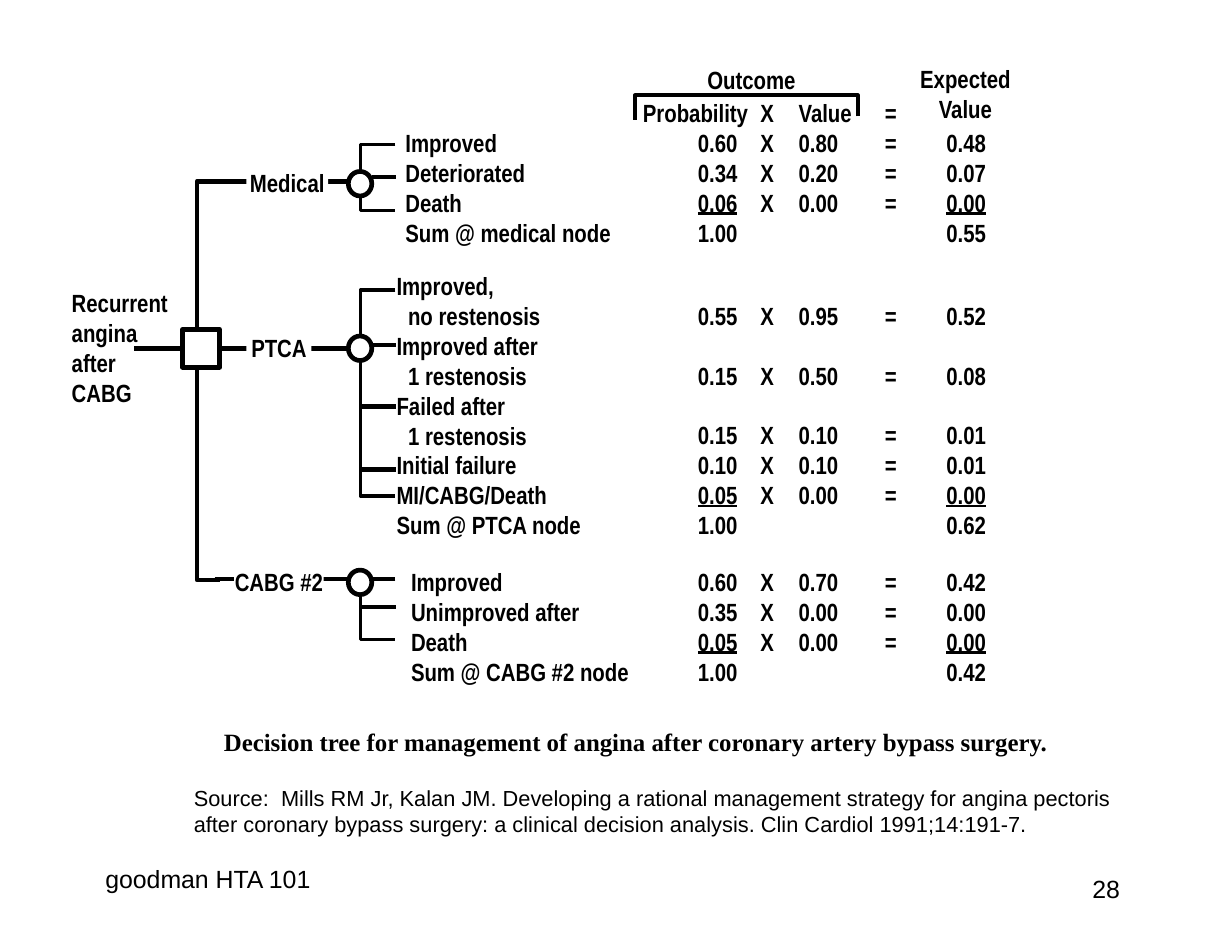
import pptx
import pptx.util
import pptx.dml.color
import pptx.enum.shapes
import pptx.enum.text
from lxml import etree

Pt = pptx.util.Pt
ALIGN = pptx.enum.text.PP_ALIGN
SHAPE = pptx.enum.shapes.MSO_SHAPE
COLORS = {"ink": "000000", "paper": "FFFFFF"}
A = "{http://schemas.openxmlformats.org/drawingml/2006/main}"
LINE_HEIGHT = 19.15
INSETS = (7.92, 4.32, 7.92, 4.32)
TAB_STOPS = (35.3, 75.6, 100.1, 155.5, 195.1)
NARROW = {"name": "Arial Narrow", "size": Pt(16), "bold": True}
PLAIN = {"name": "Arial", "size": Pt(16), "bold": False}

# Heights are measured from the middle of each branch's chance node.
BRANCHES = [
    {"name": "Medical", "name_left": 158.4, "name_width": 52.6,
     "middle": 118.1, "stem": -1.5, "spine": (-25.2, 17.3),
     "prongs": [(239, -4.3)], "text_left": 252.7, "text_top": -40.3,
     "outcomes": [("Improved", "0.60", "0.80", "0.48"),
                  ("Deteriorated", "0.34", "0.20", "0.07"),
                  ("Death", "0.06", "0.00", "0.00")],
     "sum": ("Sum @ medical node", "1.00", "0.55")},
    {"name": "PTCA", "name_left": 158.4, "name_width": 41.8,
     "middle": 223.9, "stem": 0, "spine": (-37.4, 95.1),
     "prongs": [(239, -2.1), (232, 37.5), (232, 77.8)],
     "text_left": 247, "text_top": -54,
     "outcomes": [("Improved,\nno restenosis", "0.55", "0.95", "0.52"),
                  ("Improved after\n1 restenosis", "0.15", "0.50", "0.08"),
                  ("Failed after\n1 restenosis", "0.15", "0.10", "0.01"),
                  ("Initial failure", "0.10", "0.10", "0.01"),
                  ("MI/CABG/Death", "0.05", "0.00", "0.00")],
     "sum": ("Sum @ PTCA node", "1.00", "0.62")},
    {"name": "CABG #2", "name_left": 150.5, "name_width": 57.6,
     "middle": 374.4, "stem": -2.2, "spine": (-2.2, 36.7),
     "prongs": [(231.8, 15.8)], "text_left": 256.3, "text_top": -14.4,
     "outcomes": [("Improved", "0.60", "0.70", "0.42"),
                  ("Unimproved after", "0.35", "0.00", "0.00"),
                  ("Death", "0.05", "0.00", "0.00")],
     "sum": ("Sum @ CABG #2 node", "1.00", "0.42")},
]


def color(key):
    return pptx.dml.color.RGBColor.from_string(COLORS[key])


def style_font(font, style):
    for attribute, value in style.items():
        setattr(font, attribute, value)
    font.color.rgb = color("ink")


def style_frame(frame, insets):
    margins = ("margin_left", "margin_top", "margin_right", "margin_bottom")
    for margin, inset in zip(margins, insets):
        setattr(frame, margin, Pt(inset))
    frame.word_wrap = True


def add_text(slide, box, lines, style=NARROW, align=ALIGN.LEFT, insets=INSETS, filled=False):
    """Place one paragraph per line; a line may be a list of (text, underlined) runs."""
    holder = slide.shapes.add_textbox(*map(Pt, box))
    if filled:
        holder.fill.solid()
        holder.fill.fore_color.rgb = color("paper")
    frame = holder.text_frame
    style_frame(frame, insets)
    for index, line in enumerate(lines):
        paragraph = frame.add_paragraph() if index else frame.paragraphs[0]
        paragraph.alignment = align
        for text, underlined in [(line, False)] if isinstance(line, str) else line:
            run = paragraph.add_run()
            run.text = text
            style_font(run.font, {**style, "underline": underlined})
    return frame.paragraphs


def add_line(slide, start, end, weight=3):
    line = slide.shapes.add_connector(
        pptx.enum.shapes.MSO_CONNECTOR.STRAIGHT, *map(Pt, (*start, *end)))
    line.line.color.rgb = color("ink")
    line.line.width = Pt(weight)
    etree.SubElement(line._element.spPr, A + "effectLst")
    return line


def add_outline(slide, points, weight):
    corners = [(Pt(x), Pt(y)) for x, y in points]
    builder = slide.shapes.build_freeform(*corners[0])
    builder.add_line_segments(corners[1:], close=False)
    outline = builder.convert_to_shape()
    outline.shadow.inherit = False
    outline.fill.background()
    outline.line.color.rgb = color("ink")
    outline.line.width = Pt(weight)


def add_node(slide, kind, box):
    node = slide.shapes.add_shape(kind, *map(Pt, box))
    node.shadow.inherit = False
    node.fill.solid()
    node.fill.fore_color.rgb = color("paper")
    node.line.color.rgb = color("ink")
    node.line.width = Pt(3)
    return node


def set_tabs(paragraph):
    tabs = etree.SubElement(paragraph._p.get_or_add_pPr(), A + "tabLst")
    for stop in TAB_STOPS:
        etree.SubElement(tabs, A + "tab", pos=str(Pt(stop)), algn="l")


def add_root(slide, left, middle):
    """Draw the question, the decision square and the trunk; return the square."""
    add_outline(slide, [(left + 100.8, 116.6), (left + 88.5, 116.6),
                        (left + 88.5, 372.8), (left + 103, 372.8)], 3)
    decision = add_node(slide, SHAPE.RECTANGLE, (left + 79.2, middle - 12.2, 23.8, 24.4))
    lead = add_line(slide, (left + 48.2, middle), (left + 79.2, middle))
    lead.end_connect(decision, 1)
    add_text(slide, (left, middle - 43.2, 77.8, 85), ["Recurrent angina after CABG"])
    return decision


def add_branch(slide, branch, decision):
    middle = branch["middle"]
    stem_y = middle + branch["stem"]
    stem = add_line(slide, (138, stem_y), (226.8, stem_y))
    if not branch["stem"]:
        stem.begin_connect(decision, 3)
    add_text(slide, (branch["name_left"], middle - 10.3, branch["name_width"], 19.4),
             [branch["name"]], align=ALIGN.CENTER, insets=(0, 0, 0, 0), filled=True)
    top, bottom = (middle + offset for offset in branch["spine"])
    add_outline(slide, [(254.2, top), (231.8, top), (231.8, bottom), (254.2, bottom)], 2.25)
    for start, offset in branch["prongs"]:
        add_line(slide, (start, middle + offset), (254.9, middle + offset))
    add_node(slide, SHAPE.OVAL, (223.9, middle - 7.9, 15.1, 15.8))


def add_outcomes(slide, branch, table_left):
    """List a branch's outcomes and, in tabbed columns, their calculation."""
    top = branch["middle"] + branch["text_top"]
    labels, rows, gaps = [], [], []
    outcomes = branch["outcomes"]
    for outcome in outcomes:
        label, probability, value, expected = outcome
        labels += label.split("\n")
        gaps.append(LINE_HEIGHT * label.count("\n"))
        last = outcome is outcomes[-1]
        rows.append([("\t", False), (probability, last),
                     (f"\tX\t{value}\t=\t", False), (expected, last)])
    label, probability, expected = branch["sum"]
    labels.append(label)
    rows.append(f"\t{probability}\t\t\t\t{expected}")
    gaps.append(0)

    height = LINE_HEIGHT * len(labels) + 8.6
    continued = {label.split("\n")[1] for label, *_ in outcomes if "\n" in label}
    for paragraph in add_text(slide, (branch["text_left"], top, 167, height), labels):
        if paragraph.text in continued:
            paragraph._p.get_or_add_pPr().set("marL", str(Pt(7.4)))
    first_gap, gaps[0] = gaps[0], 0
    box = (table_left, top + first_gap, 290.9, height - first_gap)
    for paragraph, gap in zip(add_text(slide, box, rows), gaps):
        paragraph.space_before = Pt(gap)
        set_tabs(paragraph)


def add_heading(slide, left, top):
    centred = {"align": ALIGN.CENTER, "insets": (0, 0, 0, 0)}
    for paragraph in add_text(slide, (left, top + 17.3, 290.9, 27.8),
                              ["Probability\tX\tValue\t="]):
        set_tabs(paragraph)
    add_text(slide, (left + 181.4, top, 67.7, 38.2), ["Expected", "Value"],
             filled=True, **centred)
    add_outline(slide, [(left + 146.1, top + 33.9), (left + 146.1, top + 20.2),
                        (left + 2.8, top + 20.2), (left + 2.8, top + 36)], 2.25)
    add_text(slide, (left + 38.1, top + 0.8, 79.2, 19.4), ["Outcome"], **centred)


def add_caption(slide, left, top):
    title = slide.shapes.title
    for side, value in zip(("left", "top", "width", "height"), (left, top, 568.1, 19.4)):
        setattr(title, side, Pt(value))
    title.text = "Decision tree for management of angina after coronary artery bypass surgery."
    style_frame(title.text_frame, (0, 0, 0, 0))
    title.text_frame.vertical_anchor = pptx.enum.text.MSO_ANCHOR.TOP
    paragraph = title.text_frame.paragraphs[0]
    paragraph.alignment = ALIGN.CENTER
    style_font(paragraph.runs[0].font,
               {"name": "Times New Roman", "size": Pt(16), "bold": True})
    add_text(slide, (left, top + 37.4, 612, 33.8),
             ["Source:  Mills RM Jr, Kalan JM. Developing a rational management strategy for "
              "angina pectoris after coronary bypass surgery: a clinical decision analysis. "
              "Clin Cardiol 1991;14:191-7."],
             {**PLAIN, "size": Pt(14)}, insets=(0, 0, 0, 0), filled=True)


def add_footer(slide, left, top):
    add_text(slide, (left, top, 203.8, 27.4), ["goodman HTA 101"], PLAIN)
    add_text(slide, (left + 507.6, top + 6.5, 164.9, 41), ["28"], PLAIN,
             ALIGN.RIGHT, (7.92, 4.32, 12.4, 4.32))


def main():
    presentation = pptx.Presentation()
    presentation.slide_width, presentation.slide_height = Pt(792), Pt(612)
    slide = presentation.slides.add_slide(presentation.slide_layouts[5])
    decision = add_root(slide, 38.2, 223.9)
    for branch in BRANCHES:
        add_branch(slide, branch, decision)
        add_outcomes(slide, branch, 405.4)
    add_heading(slide, 405.4, 41)
    add_caption(slide, 124.6, 467.3)
    add_footer(slide, 59.8, 550.8)
    presentation.save("out.pptx")


if __name__ == "__main__":
    main()
